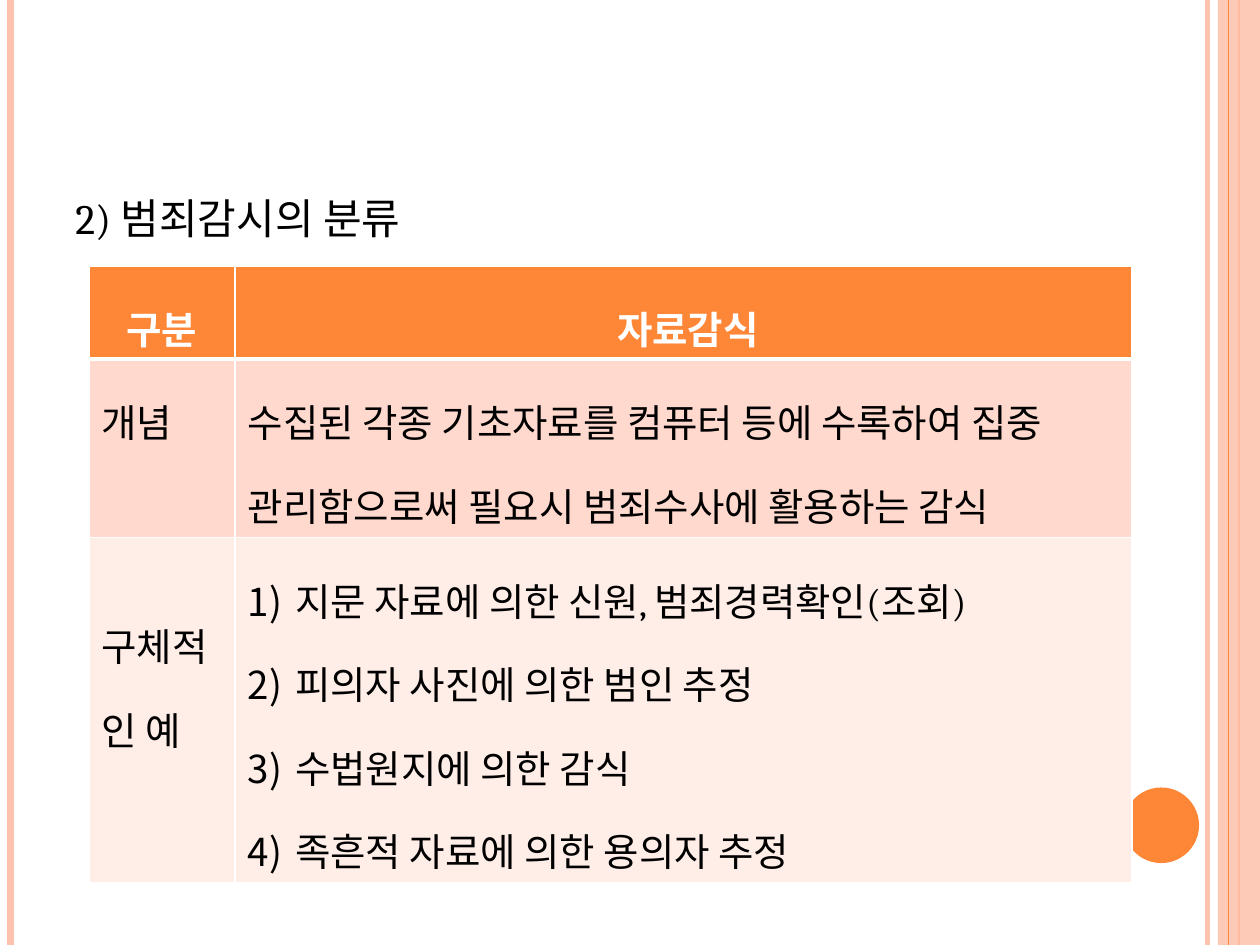
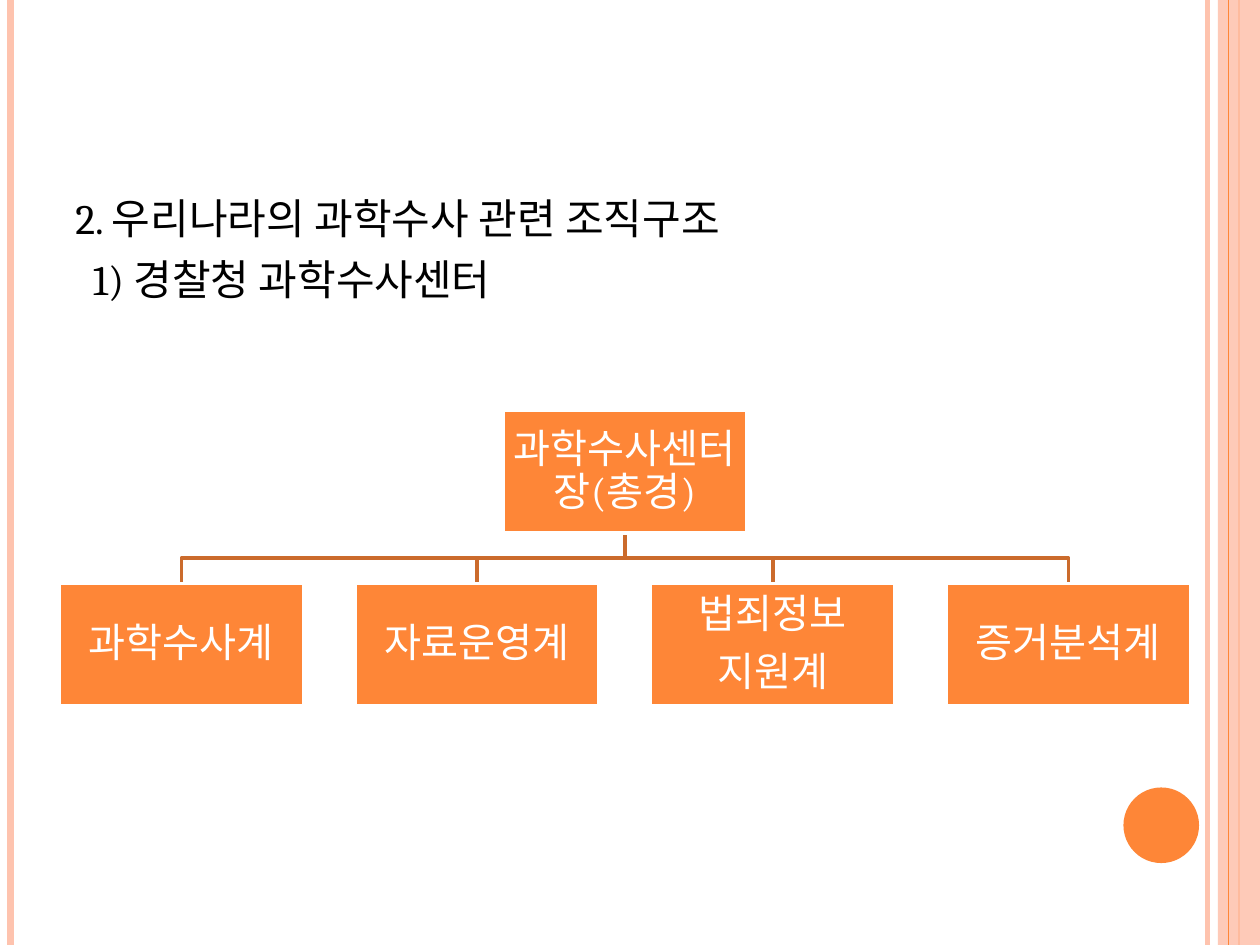
from dataclasses import dataclass

from lxml.etree import SubElement
from pptx import Presentation
from pptx.dml.color import RGBColor
from pptx.enum.shapes import MSO_CONNECTOR, MSO_SHAPE
from pptx.enum.text import MSO_ANCHOR, PP_ALIGN
from pptx.oxml import parse_xml
from pptx.oxml.ns import nsdecls, qn
from pptx.util import Pt


@dataclass(frozen=True)
class Theme:
    accent: RGBColor = RGBColor.from_string("FE8637")
    stripe: RGBColor = RGBColor.from_string("FEC3AE")
    branch: RGBColor = RGBColor.from_string("CB6B2C")
    row_dark: RGBColor = RGBColor.from_string("FFD9CE")
    row_light: RGBColor = RGBColor.from_string("FFEDE8")
    white: RGBColor = RGBColor.from_string("FFFFFF")
    black: RGBColor = RGBColor.from_string("000000")
    font: str = "Cambria"
    heading_size: int = 24
    table_size: int = 22
    chart_size: int = 23


theme = Theme()


def write(frame, lines, size, color, bold=False, **layout):
    for index, line in enumerate(lines):
        para = frame.paragraphs[0] if index == 0 else frame.add_paragraph()
        for name, value in layout.items():
            setattr(para, name, value)
        span = para.add_run()
        span.text = line
        for name, value in {"name": theme.font, "size": Pt(size), "bold": bold}.items():
            setattr(span.font, name, value)
        span.font.color.rgb = color


def add_box(page, kind, left, top, width, height, fill):
    box = page.shapes.add_shape(kind, Pt(left), Pt(top), Pt(width), Pt(height))
    box.shadow.inherit = False
    box.fill.solid()
    box.fill.fore_color.rgb = fill
    box.line.fill.background()
    return box


deck = Presentation()
deck.slide_width, deck.slide_height = Pt(720), Pt(540)

stripes_below = [(690, theme.stripe, 3), (6, theme.stripe, 4.5), (708, theme.accent, 1.5)]
stripe_above = [(702, theme.accent, 0.75)]
headings = [
    (588, [("2) 범죄감시의 분류", 0)]),
    (650, [("2. 우리나라의 과학수사 관련 조직구조", 0), ("1) 경찰청 과학수사센터", 10)]),
]

pages = []
for heading_width, heading_lines in headings:
    page = deck.slides.add_slide(deck.slide_layouts[6])
    pages.append(page)
    for stripes in (stripes_below, stripe_above):
        if stripes is stripe_above:
            band = add_box(page, MSO_SHAPE.RECTANGLE, 696, 0, 24, 540, theme.stripe)
            band_color = band.fill._xPr.find(qn("a:solidFill"))[0]
            SubElement(band_color, qn("a:alpha"), val="87000")
        for x, color, weight in stripes:
            stripe = page.shapes.add_connector(MSO_CONNECTOR.STRAIGHT, Pt(x), 0, Pt(x), Pt(540))
            stripe.line.color.rgb = color
            stripe.line.width = Pt(weight)
            SubElement(stripe._element.spPr, qn("a:effectLst"))
    add_box(page, MSO_SHAPE.OVAL, 642, 450, 43.2, 43.2, theme.accent)

    heading = page.shapes.add_textbox(Pt(36), Pt(106.5), Pt(heading_width), Pt(403))
    heading.text_frame.word_wrap = True
    write(heading.text_frame, [text for text, _ in heading_lines],
          theme.heading_size, theme.black, space_before=Pt(6))
    for para, (_, offset) in zip(heading.text_frame.paragraphs, heading_lines):
        properties = para._p.get_or_add_pPr()
        properties.set("marL", str(Pt(21.6 + offset)))
        properties.set("indent", str(Pt(-21.6)))

table_page, chart_page = pages

table_rows = [
    (53, theme.accent, [["구분"], [" 자료감식"]]),
    (102, theme.row_dark, [
        ["개념"],
        ["수집된 각종 기초자료를 컴퓨터 등에 수록하여 집중 관리함으로써 필요시 범죄수사에 활용하는 감식"],
    ]),
    (197, theme.row_light, [
        ["구체적인 예"],
        ["지문 자료에 의한 신원, 범죄경력확인(조회)", "피의자 사진에 의한 범인 추정",
         "수법원지에 의한 감식", "족흔적 자료에 의한 용의자 추정"],
    ]),
]
table = table_page.shapes.add_table(3, 2, Pt(50.8), Pt(152.2), Pt(596), Pt(352)).table
for column, width in zip(table.columns, (83.6, 512.4)):
    column.width = Pt(width)
for row_index, (height, fill, texts) in enumerate(table_rows):
    table.rows[row_index].height = Pt(height)
    is_header = row_index == 0
    for column_index, lines in enumerate(texts):
        cell = table.cell(row_index, column_index)
        write(cell.text_frame, lines, theme.table_size,
              theme.white if is_header else theme.black, bold=is_header,
              alignment=PP_ALIGN.CENTER if is_header else PP_ALIGN.LEFT, line_spacing=1.5)
        borders = cell._tc.get_or_add_tcPr()
        weights = {"L": 1, "R": 1, "T": 3 if row_index == 1 else 1, "B": 3 if is_header else 1}
        for side, weight in weights.items():
            borders.append(parse_xml(
                f'<a:ln{side} {nsdecls("a")} w="{Pt(weight)}"><a:solidFill>'
                f'<a:srgbClr val="{theme.white}"/></a:solidFill></a:ln{side}>'))
        cell.fill.solid()
        cell.fill.fore_color.rgb = fill

table.cell(2, 0).margin_top = Pt(29.6)
for para in table.cell(2, 1).text_frame.paragraphs:
    properties = para._p.get_or_add_pPr()
    properties.set("marL", str(Pt(27)))
    properties.set("indent", str(Pt(-27)))
    SubElement(properties, qn("a:buFont"), typeface="+mj-lt")
    SubElement(properties, qn("a:buAutoNum"), type="arabicParenR")

box_width, box_height = 139.6, 69.8
chief_left, chief_top, team_top = 287.3, 234.7, 333.4
team_left, team_step = 33.8, 169
teams = [["과학수사계"], ["자료운영계"], ["법죄정보", "지원계"], ["증거분석계"]]
units = [(chief_left, chief_top, ["과학수사센터장(총경)"])]
units += [(team_left + index * team_step, team_top, lines) for index, lines in enumerate(teams)]

chief_center, chief_bottom = chief_left + box_width / 2, chief_top + box_height
middle = (chief_bottom + team_top) / 2
for left, top, lines in units[1:]:
    center = left + box_width / 2
    outline = chart_page.shapes.build_freeform(Pt(chief_center), Pt(chief_bottom))
    outline.add_line_segments(
        [(Pt(chief_center), Pt(middle)), (Pt(center), Pt(middle)), (Pt(center), Pt(team_top))],
        close=False)
    branch = outline.convert_to_shape()
    branch.shadow.inherit = False
    branch.fill.background()
    branch.line.color.rgb = theme.branch
    branch.line.width = Pt(2)

box_format = {"word_wrap": True, "vertical_anchor": MSO_ANCHOR.MIDDLE}
box_format |= {f"margin_{side}": Pt(1.44) for side in ("left", "right", "top", "bottom")}
for left, top, lines in units:
    box = add_box(chart_page, MSO_SHAPE.RECTANGLE, left, top, box_width, box_height, theme.accent)
    box.line.color.rgb = theme.white
    box.line.width = Pt(2)
    for name, value in box_format.items():
        setattr(box.text_frame, name, value)
    write(box.text_frame, lines, theme.chart_size, theme.white,
          alignment=PP_ALIGN.CENTER, line_spacing=0.9, space_after=Pt(8))

deck.save("out.pptx")
